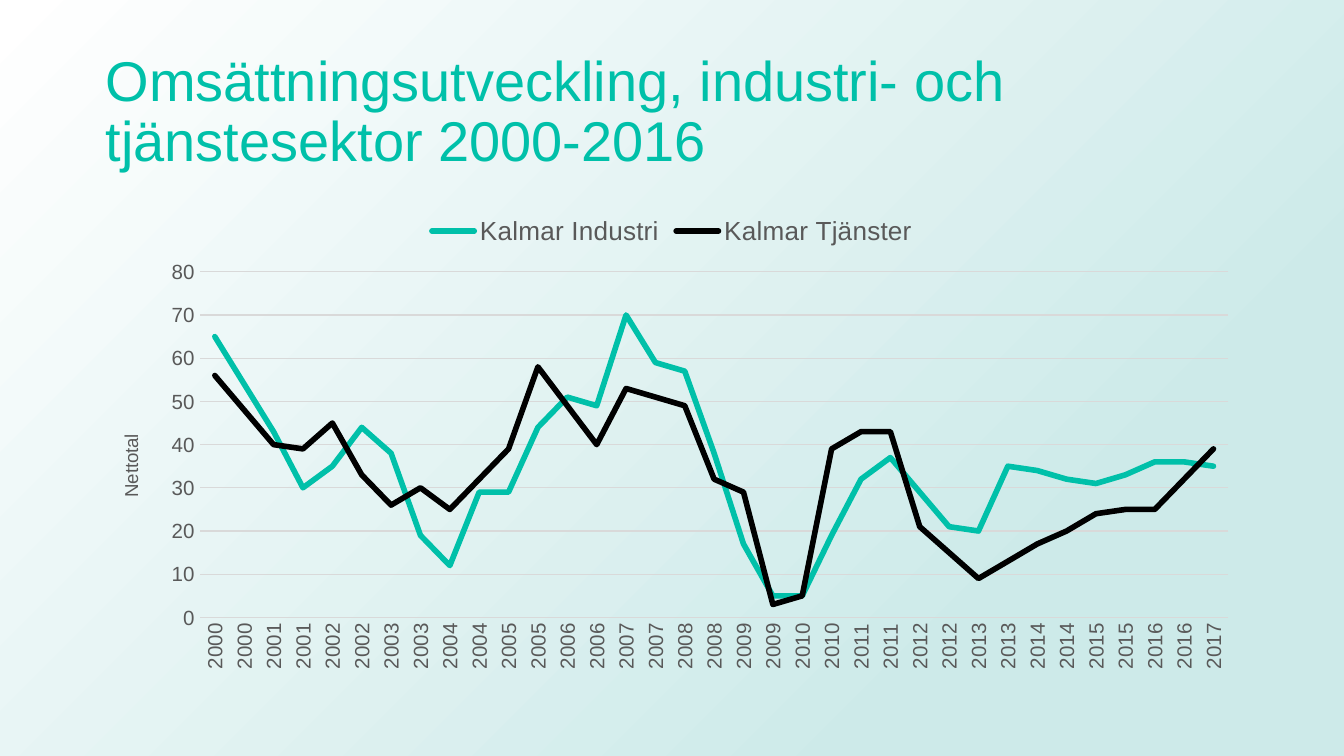
import pptx
import pptx.chart.data
import pptx.dml.color
import pptx.enum.chart
import pptx.enum.shapes
import pptx.enum.text
import pptx.oxml
import pptx.oxml.ns
import pptx.util

RGB = pptx.dml.color.RGBColor
TEAL = RGB(0x00, 0xC0, 0xA9)
MIST = RGB(0xCD, 0xEA, 0xE9)
WHITE = RGB(0xFF, 0xFF, 0xFF)
BLACK = RGB(0x00, 0x00, 0x00)
GREY = RGB(0x59, 0x59, 0x59)
PALE = RGB(0xD9, 0xD9, 0xD9)

WIDE = pptx.util.Inches(10)
HIGH = WIDE * 9 // 16
LEFT = 6.88
SPAN = 100 - 2 * LEFT
FACE = "Arial"

YEARS = [str(2000 + n // 2) for n in range(35)]
LINES = {
    "Kalmar Industri": (TEAL, [
        65, 54, 43, 30, 35, 44, 38, 19, 12, 29, 29, 44, 51, 49, 70, 59, 57, 38,
        17, 5, 5, 19, 32, 37, 29, 21, 20, 35, 34, 32, 31, 33, 36, 36, 35]),
    "Kalmar Tjänster": (BLACK, [
        56, 48, 40, 39, 45, 33, 26, 30, 25, 32, 39, 58, 49, 40, 53, 51, 49, 32,
        29, 3, 5, 39, 43, 43, 21, 15, 9, 13, 17, 20, 24, 25, 25, 32, 39]),
}


def put(item, **vals):
    for name, val in vals.items():
        setattr(item, name, val)


def area(*shares):
    return [int(full * share / 100) for full, share in zip((WIDE, HIGH) * 2, shares)]


def ink(font, size, color):
    put(font, name=FACE, size=pptx.util.Pt(size), bold=False)
    font.color.rgb = color


def rule(line, color, width):
    line.color.rgb = color
    line.width = pptx.util.Pt(width)


def parse(text):
    names = pptx.oxml.ns.nsdecls("a", "c")
    return pptx.oxml.parse_xml(text.replace(" NS", " " + names, 1))


def wash(slide):
    rect = pptx.enum.shapes.MSO_SHAPE.RECTANGLE
    shape = slide.shapes.add_shape(rect, *area(0, 0, 100, 100))
    shape.shadow.inherit = False
    shape.line.fill.background()
    shape.fill.gradient()
    for stop, (spot, color) in zip(shape.fill.gradient_stops, [(0.23, MIST), (1, WHITE)]):
        stop.color.rgb = color
        stop.position = spot
    lin = shape.element.xpath(".//a:gradFill/a:lin")[0]
    lin.getparent().replace(lin, parse(
        '<a:path NS path="circle"><a:fillToRect l="100000" t="100000"/></a:path>'))


def head(slide, text):
    frame = slide.shapes.add_textbox(*area(LEFT, 5.32, SPAN, 19.33)).text_frame
    put(frame, word_wrap=True, vertical_anchor=pptx.enum.text.MSO_ANCHOR.MIDDLE)
    para = frame.paragraphs[0]
    put(para, text=text, line_spacing=0.9)
    ink(para.runs[0].font, 30, TEAL)


def place(node, slot, **vals):
    for old in node.xpath("./c:layout"):
        node.remove(old)
    inner = '<c:layoutTarget val="inner"/>' if "w" in vals else ""
    modes = "".join(f'<c:{key}Mode val="edge"/>' for key in "xy")
    sizes = "".join(f'<c:{key} val="{val / 100}"/>' for key, val in vals.items())
    node.insert(slot, parse(
        f"<c:layout NS><c:manualLayout>{inner}{modes}{sizes}</c:manualLayout></c:layout>"))


def style(axis):
    put(axis, major_tick_mark=pptx.enum.chart.XL_TICK_MARK.NONE,
        minor_tick_mark=pptx.enum.chart.XL_TICK_MARK.NONE)
    ink(axis.tick_labels.font, 11, GREY)


def scale(axis):
    style(axis)
    put(axis, minimum_scale=0, maximum_scale=80, major_unit=10)
    put(axis.tick_labels, number_format="0", number_format_is_linked=False)
    axis.format.line.fill.background()
    rule(axis.major_gridlines.format.line, PALE, 0.75)
    para = axis.axis_title.text_frame.paragraphs[0]
    para.text = "Nettotal"
    ink(para.runs[0].font, 10, GREY)


def graph(slide):
    data = pptx.chart.data.CategoryChartData()
    data.categories = YEARS
    for name, (color, vals) in LINES.items():
        data.add_series(name, vals)
    kind = pptx.enum.chart.XL_CHART_TYPE.LINE
    chart = slide.shapes.add_chart(kind, *area(LEFT, 26.62, SPAN, 63.35), data).chart
    put(chart, has_title=False, has_legend=True)
    ink(chart.font, 10, BLACK)
    put(chart.legend, include_in_layout=False,
        position=pptx.enum.chart.XL_LEGEND_POSITION.TOP)
    ink(chart.legend.font, 14, GREY)
    chart.plots[0].vary_by_categories = False
    for line, (color, vals) in zip(chart.plots[0].series, LINES.values()):
        line.smooth = False
        rule(line.format.line, color, 3)
    style(chart.category_axis)
    rule(chart.category_axis.format.line, PALE, 0.75)
    scale(chart.value_axis)
    root = chart.element
    for edge in root.xpath(".//c:ser/c:spPr/a:ln"):
        edge.set("cap", "rnd")
    for body in root.xpath(".//c:catAx/c:txPr/a:bodyPr | .//c:valAx/c:title//a:bodyPr"):
        body.attrib.update({"rot": "-5400000", "vert": "horz"})
    place(root.xpath(".//c:plotArea")[0], 0, x=9.29, y=14.75, w=88.7, h=72.2)
    place(root.xpath(".//c:valAx/c:title")[0], 1, x=2, y=48)


def main():
    deck = pptx.Presentation()
    put(deck, slide_width=WIDE, slide_height=HIGH)
    slide = deck.slides.add_slide(deck.slide_layouts[6])
    wash(slide)
    head(slide, "Omsättningsutveckling, industri- och tjänstesektor 2000-2016")
    graph(slide)
    deck.save("out.pptx")


if __name__ == "__main__":
    main()
